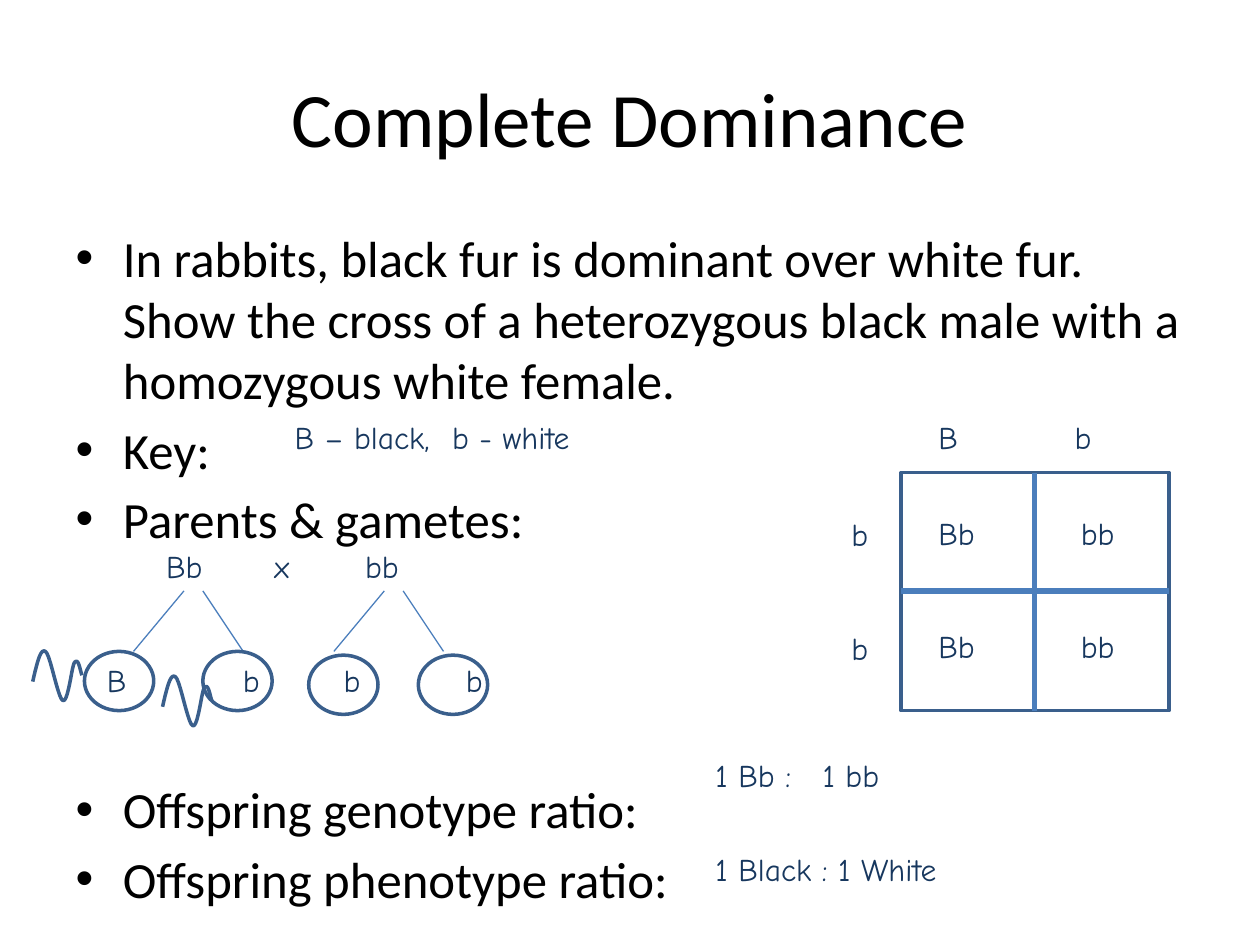
"""Build the Complete Dominance slide: a rabbit fur cross with gametes and Punnett square."""
from lxml import etree
from pptx import Presentation
from pptx.dml.color import RGBColor
from pptx.enum import shapes, text
from pptx.oxml import ns
from pptx.util import Inches, Pt

BLACK = RGBColor(0x00, 0x00, 0x00)
WHITE = RGBColor(0xFF, 0xFF, 0xFF)
NAVY = RGBColor(0x17, 0x37, 0x5E)
OUTLINE = RGBColor(0x3A, 0x5F, 0x8C)
RULE = RGBColor(0x4B, 0x7E, 0xBC)

deck = Presentation()
deck.slide_width, deck.slide_height = Inches(10), Inches(7.5)
slide = deck.slides.add_slide(deck.slide_layouts[1])


def add_label(words, left, top, width=0.6):
    label = slide.shapes.add_textbox(Inches(left), Inches(top), Inches(width), Inches(0.4))
    label.text_frame.word_wrap = True
    run = label.text_frame.paragraphs[0].add_run()
    run.text = words
    run.font.name, run.font.size = "Comic Neue", Pt(18)
    run.font.color.rgb = NAVY


def add_rule(x1, y1, x2, y2, weight):
    rule = slide.shapes.add_connector(
        shapes.MSO_CONNECTOR.STRAIGHT, Inches(x1), Inches(y1), Inches(x2), Inches(y2))
    rule.line.color.rgb, rule.line.width = RULE, Pt(weight)
    etree.SubElement(rule._element.spPr, ns.qn("a:effectLst"))


title = slide.shapes.title
title.left, title.top, title.width, title.height = map(Inches, (0.5, 0.3, 9, 1.25))
title.text_frame.vertical_anchor = text.MSO_ANCHOR.MIDDLE
heading = title.text_frame.paragraphs[0]
heading.alignment = text.PP_ALIGN.CENTER
heading_run = heading.add_run()
heading_run.text = "Complete Dominance"
heading_run.font.name, heading_run.font.size = "Calibri", Pt(44)
heading_run.font.color.rgb = BLACK

body = slide.placeholders[1]
body.left, body.top, body.width, body.height = map(Inches, (0.5, 1.75, 8.99, 5.54))
body.text_frame.auto_size = text.MSO_AUTO_SIZE.NONE
prompts = [
    ("In rabbits, black fur is dominant over white fur. Show the cross of a "
     "heterozygous black male with a homozygous white female.", 5),
    ("Key:", 5),
    ("Parents & gametes:", 5),
    ("Offspring genotype ratio:", 131),
    ("Offspring phenotype ratio:", 5),
]
for number, (words, gap) in enumerate(prompts):
    prompt = body.text_frame.add_paragraph() if number else body.text_frame.paragraphs[0]
    prompt.space_before = Pt(gap)
    prompt_run = prompt.add_run()
    prompt_run.text = words
    prompt_run.font.name, prompt_run.font.size = "Calibri", Pt(29)
    prompt_run.font.color.rgb = BLACK

square = slide.shapes.add_shape(
    shapes.MSO_SHAPE.RECTANGLE, Inches(7.15), Inches(3.75), Inches(2.13), Inches(1.89))
square.shadow.inherit = False
square.fill.solid()
square.fill.fore_color.rgb = WHITE
square.line.color.rgb, square.line.width = OUTLINE, Pt(2)
add_rule(8.21, 3.75, 8.21, 5.64, 3)
add_rule(7.15, 4.69, 9.28, 4.69, 3)

add_label("B – black,", 2.24, 3.27, 1.4)
add_label("b - white", 3.49, 3.27, 1.4)

for words, left in (("Bb", 1.22), ("x", 2.08), ("bb", 2.8)):
    add_label(words, left, 4.29)
for parent in (1.46, 3.05):
    add_rule(parent, 4.69, parent - 0.4, 5.17, 0.75)
    add_rule(parent + 0.15, 4.69, parent + 0.47, 5.17, 0.75)

gametes = [("B", 0.75, 0.67, 5.17), ("b", 1.83, 1.61, 5.17),
           ("b", 2.63, 2.45, 5.2), ("b", 3.6, 3.32, 5.2)]
for allele, letter_left, cell_left, cell_top in gametes:
    add_label(allele, letter_left, 5.2)
    cell = slide.shapes.add_shape(
        shapes.MSO_SHAPE.OVAL, Inches(cell_left), Inches(cell_top), Inches(0.55), Inches(0.47))
    cell.shadow.inherit = False
    cell.fill.background()
    cell.line.color.rgb, cell.line.width = OUTLINE, Pt(2)

tail_curves = [
    ((0, 0.25), (0.03, 0.12), (0.06, -0.02), (0.1, 0.01)),
    ((0.1, 0.01), (0.14, 0.03), (0.2, 0.39), (0.24, 0.4)),
    ((0.24, 0.4), (0.28, 0.42), (0.31, 0.13), (0.33, 0.1)),
    ((0.33, 0.1), (0.36, 0.06), (0.37, 0.13), (0.39, 0.2)),
]
STEPS = 10
for tail_left, tail_top in ((0.26, 5.16), (1.29, 5.36)):
    points = []
    for curve in tail_curves:
        for step in range(1, STEPS + 1):
            t = step / STEPS
            weights = ((1 - t) ** 3, 3 * t * (1 - t) ** 2, 3 * t ** 2 * (1 - t), t ** 3)
            x, y = (sum(w * p[axis] for w, p in zip(weights, curve)) for axis in (0, 1))
            points.append((Inches(tail_left + x), Inches(tail_top + y)))
    outline = slide.shapes.build_freeform(Inches(tail_left), Inches(tail_top + 0.25))
    outline.add_line_segments(points, close=False)
    tail = outline.convert_to_shape()
    tail.shadow.inherit = False
    tail.fill.background()
    tail.line.color.rgb, tail.line.width = OUTLINE, Pt(2)

add_label("B", 7.35, 3.27)
add_label("b", 8.43, 3.27)
for row_top in (4.04, 4.94):
    add_label("b", 6.66, row_top)
    add_label("Bb", 7.35, row_top - 0.01)
    add_label("bb", 8.48, row_top - 0.01)

add_label("1 Bb :", 5.58, 5.95, 0.9)
add_label("1 bb", 6.43, 5.95, 0.9)
add_label("1 Black : 1 White", 5.58, 6.7, 3.54)

deck.save("out.pptx")
